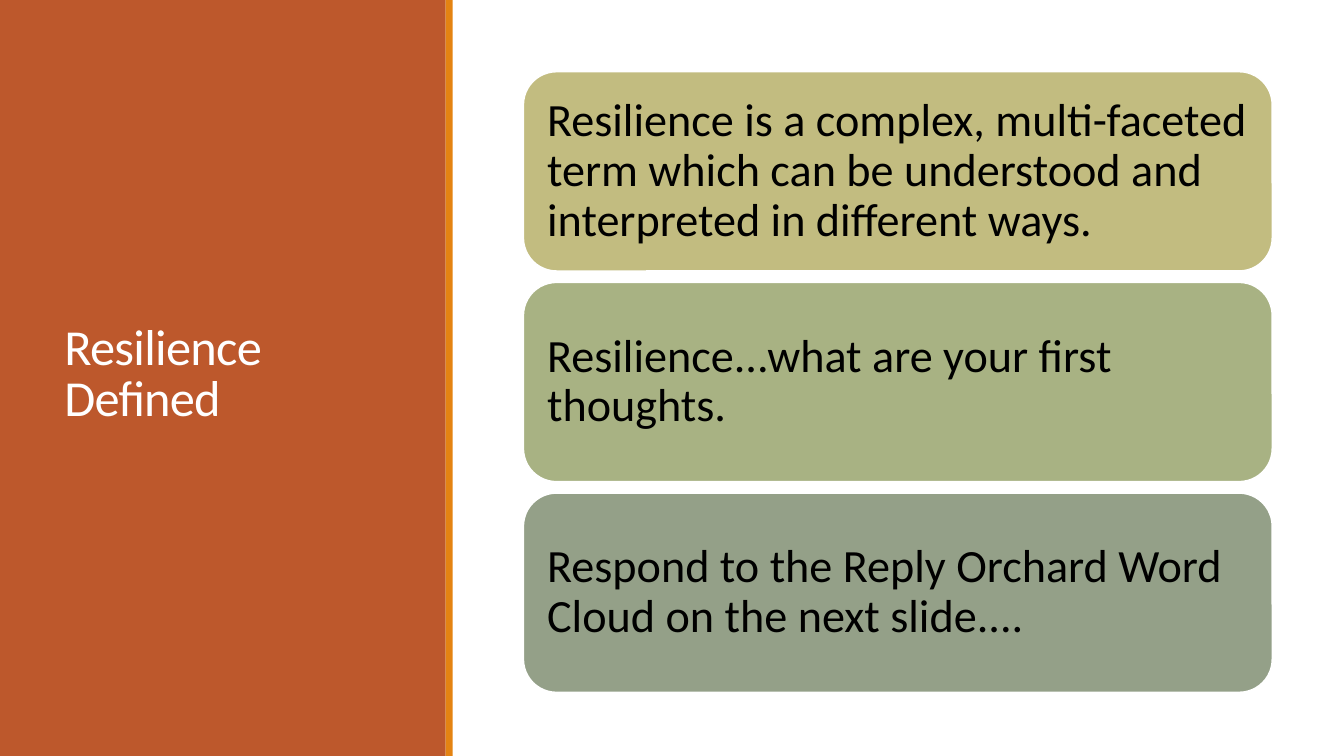
from pptx import Presentation
from pptx.dml.color import RGBColor
from pptx.enum.shapes import MSO_SHAPE
from pptx.enum.text import MSO_ANCHOR, PP_ALIGN
from pptx.util import Inches, Pt

RECTANGLE = MSO_SHAPE.RECTANGLE
ROUNDED = MSO_SHAPE.ROUNDED_RECTANGLE
MIDDLE = MSO_ANCHOR.MIDDLE
LEFT = PP_ALIGN.LEFT

TITLE = "Resilience Defined"
CARDS = [
    ("Resilience is a complex, multi-faceted term which can be understood "
     "and interpreted in different ways.", "khaki"),
    ("Resilience...what are your first thoughts.", "olive"),
    ("Respond to the Reply Orchard Word Cloud on the next slide....", "sage"),
]
COLORS = {
    "rust": "BD582C", "orange": "E48312", "white": "FFFFFF", "black": "000000",
    "khaki": "C2BC80", "olive": "A8B283", "sage": "94A088",
}
FONT = "Calibri"
SLIDE_WIDTH, SLIDE_HEIGHT = 13.33, 7.5
PANEL_WIDTH, STRIPE_WIDTH = 4.42, 0.07
CARD_LEFT, CARD_TOP, CARD_WIDTH, CARD_HEIGHT = 5.19, 0.71, 7.43, 1.98
CARD_GAP = 0.11


def color(name):
    """Return the named colour."""
    return RGBColor.from_string(COLORS[name])


def add_block(slide, kind, left, top, width, height, fill, line=None):
    """Add a flat filled shape, outlined only if a line colour is given."""
    block = slide.shapes.add_shape(
        kind, Inches(left), Inches(top), Inches(width), Inches(height))
    block.shadow.inherit = False
    block.fill.solid()
    block.fill.fore_color.rgb = color(fill)
    if line:
        block.line.color.rgb = color(line)
        block.line.width = Pt(1.25)
    else:
        block.line.fill.background()
    return block


def write(box, text, size, ink, line_spacing, side=0.1, edge=0.05, tracking=0):
    """Put one left-aligned, vertically centred paragraph into a box."""
    frame = box.text_frame
    frame.word_wrap = True
    frame.vertical_anchor = MIDDLE
    frame.margin_left = frame.margin_right = Inches(side)
    frame.margin_top = frame.margin_bottom = Inches(edge)
    para = frame.paragraphs[0]
    para.alignment = LEFT
    para.line_spacing = line_spacing
    span = para.add_run()
    span.text = text
    span.font.name = FONT
    span.font.size = Pt(size)
    span.font.color.rgb = color(ink)
    if tracking:
        span.font._element.set("spc", str(int(tracking * 100)))


deck = Presentation()
deck.slide_width, deck.slide_height = Inches(SLIDE_WIDTH), Inches(SLIDE_HEIGHT)
page = deck.slides.add_slide(deck.slide_layouts[6])

add_block(page, RECTANGLE, 0, 0, PANEL_WIDTH, SLIDE_HEIGHT, "rust")
add_block(page, RECTANGLE, PANEL_WIDTH, 0, STRIPE_WIDTH, SLIDE_HEIGHT, "orange")

title_box = page.shapes.add_textbox(
    Inches(0.54), Inches(0.57), Inches(3.37), Inches(6.31))
write(title_box, TITLE, 36, "white", 0.85, tracking=-0.5)

for row, (text, fill) in enumerate(CARDS):
    top = CARD_TOP + row * (CARD_HEIGHT + CARD_GAP)
    card = add_block(page, ROUNDED, CARD_LEFT, top, CARD_WIDTH, CARD_HEIGHT,
                     fill, line="white")
    write(card, text, 33, "black", 0.9, side=0.14, edge=0.14)

deck.save("out.pptx")
